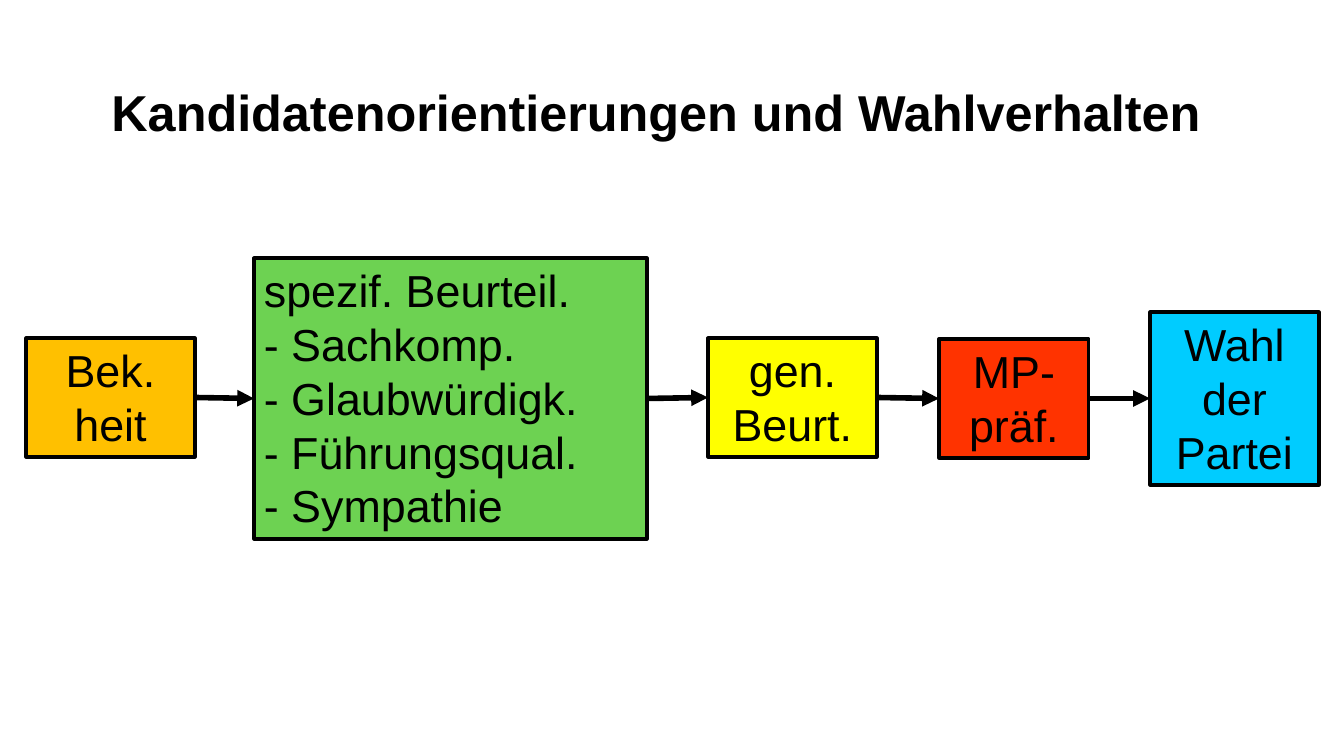
from lxml import etree
from pptx import Presentation
from pptx import util as u
from pptx.dml.color import RGBColor
from pptx.enum import shapes, text
from pptx.oxml.ns import qn

PX = 914400 / 100.8
TOP, LEFT, BOTTOM, RIGHT = range(4)
CENTER, START = text.PP_ALIGN.CENTER, text.PP_ALIGN.LEFT


def px(*sizes):
    return [u.Emu(round(size * PX)) for size in sizes]


def color(code):
    return RGBColor.from_string(code)


class Board:
    font = "Arial"
    ink = "000000"

    def __init__(self, deck):
        self.slide = deck.slides.add_slide(deck.slide_layouts[6])

    def label(self, shape, words, size, align, bold=False):
        """Fill a shape with one paragraph; newlines become line breaks."""
        frame = shape.text_frame
        frame.word_wrap = True
        frame.auto_size = text.MSO_AUTO_SIZE.SHAPE_TO_FIT_TEXT
        para = frame.paragraphs[0]
        para.text = words.replace("\n", "\v")
        para.alignment = align
        para.font.name = self.font
        para.font.size = u.Pt(size)
        para.font.bold = bold
        para.font.color.rgb = color(self.ink)

    def title(self, words, *place):
        shape = self.slide.shapes.add_textbox(*px(*place))
        self.label(shape, words, 36, CENTER, True)

    def box(self, words, fill, align, *place):
        shape = self.slide.shapes.add_shape(
            shapes.MSO_SHAPE.RECTANGLE, *px(*place))
        shape.shadow.inherit = False
        shape.fill.solid()
        shape.fill.fore_color.rgb = color(fill)
        shape.line.color.rgb = color(self.ink)
        shape.line.width = u.Pt(2.25)
        self.label(shape, words, 32, align)
        shape.text_frame.vertical_anchor = text.MSO_ANCHOR.TOP
        return shape

    def arrow(self, start, end):
        """Join the right side of one box to the left side of the next."""
        link = self.slide.shapes.add_connector(
            shapes.MSO_CONNECTOR.STRAIGHT, 0, 0, 0, 0)
        link.begin_connect(start, RIGHT)
        link.end_connect(end, LEFT)
        link.line.color.rgb = color(self.ink)
        link.line.width = u.Pt(4)
        props = link.element.spPr
        etree.SubElement(props.find(qn("a:ln")), qn("a:tailEnd"),
                         type="triangle")
        etree.SubElement(props, qn("a:effectLst"))


TRAITS = """spezif. Beurteil.
- Sachkomp.
- Glaubwürdigk.
- Führungsqual.
- Sympathie"""

STEPS = [
    ("Bek.\nheit", "FFC000", CENTER, 26, 338, 169, 119),
    (TRAITS, "6DD252", START, 254, 258, 393, 281),
    ("gen.\nBeurt.", "FFFF00", CENTER, 708, 338, 169, 119),
    ("MP-\npräf.", "FF3300", CENTER, 939, 339, 150, 119),
    ("Wahl\nder\nPartei", "00CCFF", CENTER, 1150, 312, 169, 173),
]


def main():
    deck = Presentation()
    deck.slide_width, deck.slide_height = px(1344, 756)
    board = Board(deck)
    board.title("Kandidatenorientierungen und Wahlverhalten ",
                32, 76, 1263, 71)
    boxes = [board.box(*step) for step in STEPS]
    for start, end in zip(boxes, boxes[1:]):
        board.arrow(start, end)
    deck.save("out.pptx")


if __name__ == "__main__":
    main()
